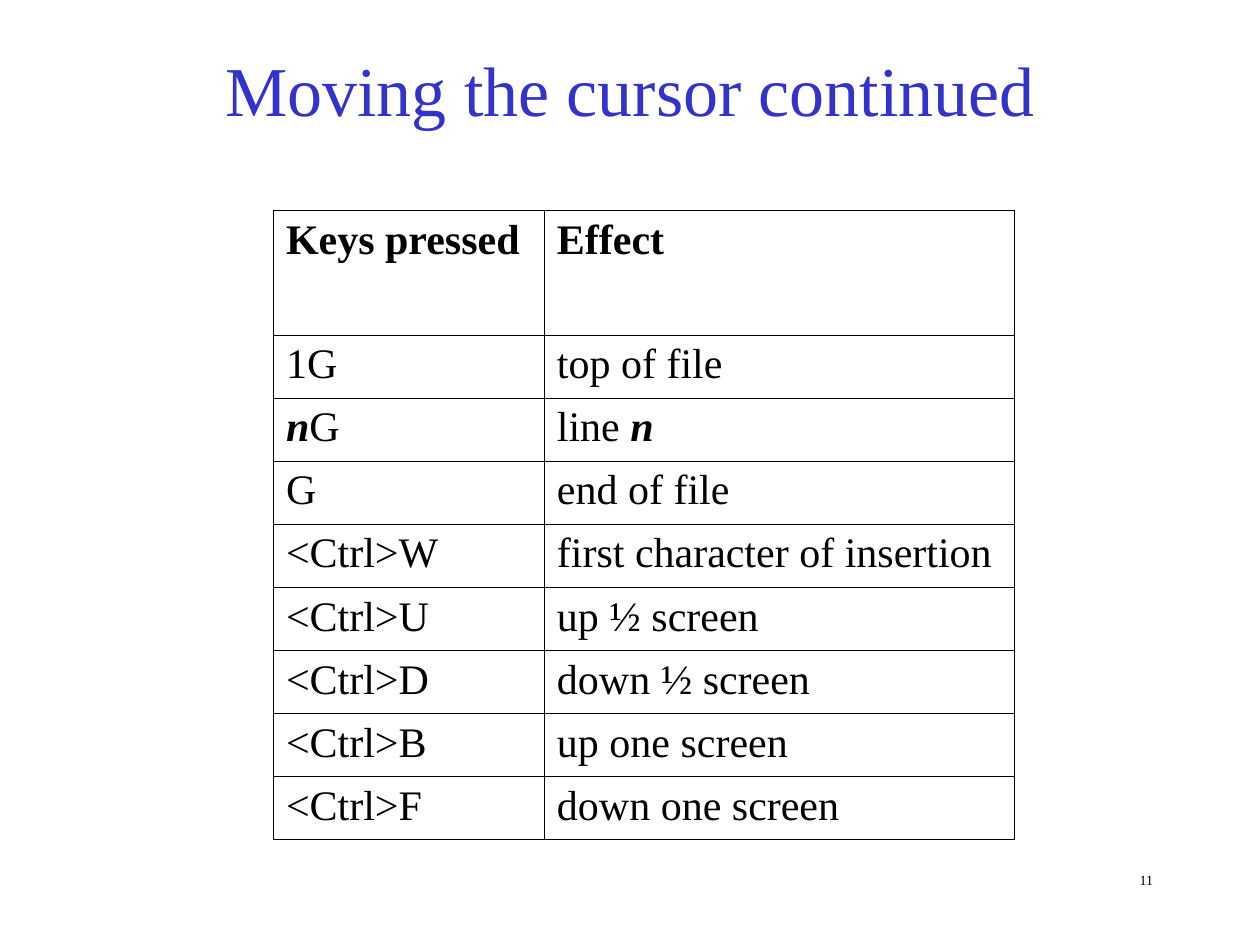
from dataclasses import dataclass

from lxml import etree
from pptx import Presentation
from pptx import util as u
from pptx.dml.color import RGBColor
from pptx.enum import text
from pptx.oxml import ns


@dataclass(frozen=True)
class Theme:
    font: str = "Times New Roman"
    title_color: str = "3333CC"
    ink: str = "000000"
    title_size: int = 40
    table_size: int = 24
    number_size: int = 8
    border_width: float = 0.75


theme = Theme()


def add_text(para, content, size, color=theme.ink, bold=False, italic=False):
    span = para.add_run()
    span.text = content
    span.font.name = theme.font
    span.font.size = u.Pt(size)
    span.font.bold = bold
    span.font.italic = italic
    span.font.color.rgb = RGBColor.from_string(color)


def add_borders(cell):
    properties = cell._tc.get_or_add_tcPr()
    for position, side in enumerate(("lnL", "lnR", "lnT", "lnB")):
        line = etree.Element(ns.qn(f"a:{side}"), w=str(u.Pt(theme.border_width)))
        fill = etree.SubElement(line, ns.qn("a:solidFill"))
        etree.SubElement(fill, ns.qn("a:srgbClr"), val=theme.ink)
        properties.insert(position, line)


deck = Presentation()
deck.slide_width, deck.slide_height = u.Inches(10), u.Inches(7.5)
page = deck.slides.add_slide(deck.slide_layouts.get_by_name("Title Only"))

# Page number
number_box = page.shapes.add_textbox(
    u.Inches(7.17), u.Inches(6.83), u.Inches(2.08), u.Inches(0.5))
number_box.text_frame.word_wrap = True
number_box.text_frame.margin_top = u.Inches(0.09)
para = number_box.text_frame.paragraphs[0]
para.alignment = text.PP_ALIGN.RIGHT
add_text(para, "11", theme.number_size)

# Table of keys: each cell is a list of (content, is_emphasized)
rows = [
    ([("Keys pressed", False)], [("Effect", False)]),
    ([("1G", False)], [("top of file", False)]),
    ([("n", True), ("G", False)], [("line ", False), ("n", True)]),
    ([("G", False)], [("end of file", False)]),
    ([("<Ctrl>W", False)], [("first character of insertion", False)]),
    ([("<Ctrl>U", False)], [("up ½ screen", False)]),
    ([("<Ctrl>D", False)], [("down ½ screen", False)]),
    ([("<Ctrl>B", False)], [("up one screen", False)]),
    ([("<Ctrl>F", False)], [("down one screen", False)]),
]
column_widths = (2.15, 3.73)
header_height, row_height = 0.99, 0.47
indent = u.Inches(0.38)

table = page.shapes.add_table(
    len(rows), len(column_widths), u.Inches(2.17), u.Inches(1.67),
    u.Inches(sum(column_widths)),
    u.Inches(header_height + row_height * (len(rows) - 1))).table
table.first_row = table.horz_banding = False
for column, width in zip(table.columns, column_widths):
    column.width = u.Inches(width)

for row_index, row in enumerate(rows):
    is_header = row_index == 0
    table.rows[row_index].height = u.Inches(header_height if is_header else row_height)
    for column_index, parts in enumerate(row):
        cell = table.cell(row_index, column_index)
        cell.fill.background()
        add_borders(cell)
        para = cell.text_frame.paragraphs[0]
        para_properties = para._p.get_or_add_pPr()
        para_properties.set("marL", str(indent))
        para_properties.set("indent", str(-indent))
        for content, emphasized in parts:
            add_text(para, content, theme.table_size,
                     bold=is_header or emphasized, italic=emphasized)

# Title
title = page.shapes.title
title.left, title.top = u.Inches(0.75), u.Inches(0.08)
title.width, title.height = u.Inches(8.5), u.Inches(1.25)
title.text_frame.vertical_anchor = text.MSO_ANCHOR.MIDDLE
para = title.text_frame.paragraphs[0]
para.alignment = text.PP_ALIGN.CENTER
add_text(para, "Moving the cursor continued", theme.title_size, color=theme.title_color)

deck.save("out.pptx")
